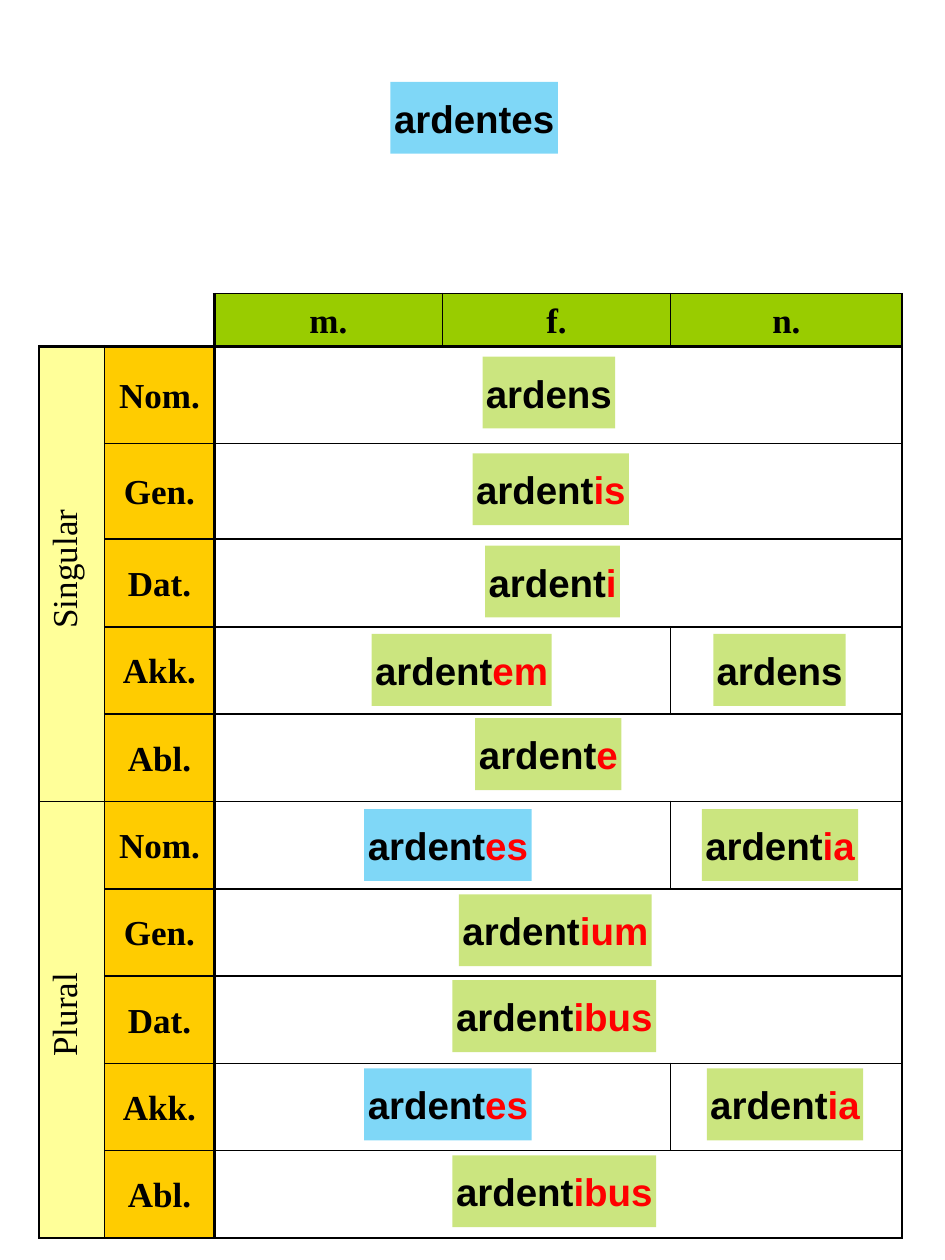
from lxml import etree
from pptx import Presentation
from pptx.dml.color import RGBColor
from pptx.enum.shapes import MSO_SHAPE
from pptx.enum.text import MSO_ANCHOR, MSO_AUTO_SIZE, PP_ALIGN
from pptx.oxml.ns import qn
from pptx.util import Cm, Pt

RECTANGLE = MSO_SHAPE.RECTANGLE
MIDDLE = MSO_ANCHOR.MIDDLE
FIT_SHAPE = MSO_AUTO_SIZE.SHAPE_TO_FIT_TEXT
CENTER = PP_ALIGN.CENTER

COLUMNS = [1.32, 2.21, 4.6, 4.6, 4.67]
ROWS = [1.06, 1.95, 1.93, 1.77] + [1.76] * 7
GENDERS = ["m.", "f.", "n."]
NUMBERS = ["Singular", "Plural"]
CASES = ["Nom.", "Gen.", "Dat.", "Akk.", "Abl."]

CARD_WIDTHS = {
    "ardens": 2.67, "ardentis": 3.15, "ardenti": 2.72, "ardentem": 3.63, "ardente": 2.95,
    "ardentes": 3.38, "ardentia": 3.15, "ardentium": 3.89, "ardentibus": 4.11,
}
FORMS = [
    (7.19, [(9.73, "ardens", "")]),
    (9.14, [(9.53, "ardent", "is")]),
    (11.0, [(9.78, "ardent", "i")]),
    (12.78, [(7.49, "ardent", "em"), (14.38, "ardens", "")]),
    (14.48, [(9.58, "ardent", "e")]),
    (16.31, [(7.34, "ardent", "es"), (14.15, "ardent", "ia")]),
    (18.03, [(9.25, "ardent", "ium")]),
    (19.76, [(9.12, "ardent", "ibus")]),
    (21.54, [(7.34, "ardent", "es"), (14.25, "ardent", "ia")]),
    (23.29, [(9.12, "ardent", "ibus")]),
]


def color(code):
    return RGBColor.from_string(code)


def write(para, text, font="Arial", size=22, bold=True, ink="000000"):
    para.alignment = CENTER
    span = para.add_run()
    span.text = text
    span.font.name = font
    span.font.size = Pt(size)
    span.font.bold = bold
    span.font.color.rgb = color(ink)


class DeclensionPage:
    green = "99CC00"
    blue = "00B0F0"
    orange = "FFCC00"
    yellow = "FFFF99"
    red = "FF0000"
    black = "000000"
    thin, thick = 1, 2.25

    def __init__(self, deck):
        self.page = deck.slides.add_slide(deck.slide_layouts[6])

    def card(self, left, top, stem, ending=""):
        word = stem + ending
        box = self.page.shapes.add_shape(
            RECTANGLE, Cm(left), Cm(top), Cm(CARD_WIDTHS[word]), Cm(1.45))
        box.shadow.inherit = False
        box.line.fill.background()
        box.fill.solid()
        box.fill.fore_color.rgb = color(self.blue if word == "ardentes" else self.green)
        tint = next(box.element.spPr.iter(qn("a:srgbClr")))
        etree.SubElement(tint, qn("a:alpha"), val="50000")
        frame = box.text_frame
        frame.word_wrap = False
        frame.auto_size = FIT_SHAPE
        frame.margin_left = frame.margin_right = Cm(0.05)
        frame.margin_top = frame.margin_bottom = Cm(0.25)
        para = frame.paragraphs[0]
        write(para, stem)
        if ending:
            write(para, ending, ink=self.red)

    def grid(self, left, top):
        shape = self.page.shapes.add_table(
            len(ROWS), len(COLUMNS), Cm(left), Cm(top), Cm(sum(COLUMNS)), Cm(sum(ROWS)))
        self.table = shape.table
        self.table.first_row = self.table.horz_banding = False
        for column, width in zip(self.table.columns, COLUMNS):
            column.width = Cm(width)
        for row, height in zip(self.table.rows, ROWS):
            row.height = Cm(height)

    def border(self, cell, side, weight):
        line = etree.SubElement(cell._tc.get_or_add_tcPr(), qn("a:ln" + side), w=str(Pt(weight)))
        paint = etree.SubElement(line, qn("a:solidFill"))
        etree.SubElement(paint, qn("a:srgbClr"), val=self.black)

    def area(self, row, column, height=1, width=1, fill=None):
        first = self.table.cell(row, column)
        bottom, right = row + height, column + width
        if height * width > 1:
            first.merge(self.table.cell(bottom - 1, right - 1))
        corner = row == column == 0
        for y in range(row, bottom):
            for x in range(column, right):
                cell = self.table.cell(y, x)
                origin = (y, x) == (row, column)
                edges = [
                    ("L", x == column and not corner, column == 2),
                    ("R", x == right - 1 or origin, right == 2),
                    ("T", y == row and not corner, row == 1),
                    ("B", y == bottom - 1 or origin, bottom == 1),
                ]
                for side, shown, heavy in edges:
                    if shown:
                        self.border(cell, side, self.thick if heavy else self.thin)
                if fill:
                    cell.fill.solid()
                    cell.fill.fore_color.rgb = color(fill)
                else:
                    cell.fill.background()
                cell.margin_left = cell.margin_right = Cm(0.15)
                cell.margin_top = cell.margin_bottom = Cm(0.08)
                cell.vertical_anchor = MIDDLE
        return first

    def label(self, cell, text, upright=True):
        para = cell.text_frame.paragraphs[0]
        para.line_spacing = 1.07
        write(para, text, font="Times New Roman", size=20, bold=upright)
        if not upright:
            cell._tc.get_or_add_tcPr().set("vert", "vert270")
            para._p.get_or_add_pPr().set("marL", str(Cm(0.2)))


def main():
    deck = Presentation()
    deck.slide_width, deck.slide_height = Cm(19.05), Cm(25.4)
    sheet = DeclensionPage(deck)
    sheet.card(7.87, 1.65, "ardentes")
    sheet.grid(0.79, 5.92)
    sheet.area(0, 0, width=2)
    for column, gender in enumerate(GENDERS, 2):
        sheet.label(sheet.area(0, column, fill=sheet.green), gender)
    for index, number in enumerate(NUMBERS):
        start = 1 + index * len(CASES)
        block = sheet.area(start, 0, height=len(CASES), fill=sheet.yellow)
        sheet.label(block, number, upright=False)
    for row, (top, forms) in enumerate(FORMS, 1):
        case = CASES[(row - 1) % len(CASES)]
        sheet.label(sheet.area(row, 1, fill=sheet.orange), case)
        if len(forms) == 2:
            sheet.area(row, 2, width=2)
            sheet.area(row, 4)
        else:
            sheet.area(row, 2, width=3)
        for left, stem, ending in forms:
            sheet.card(left, top, stem, ending)
    deck.save("out.pptx")


if __name__ == "__main__":
    main()
